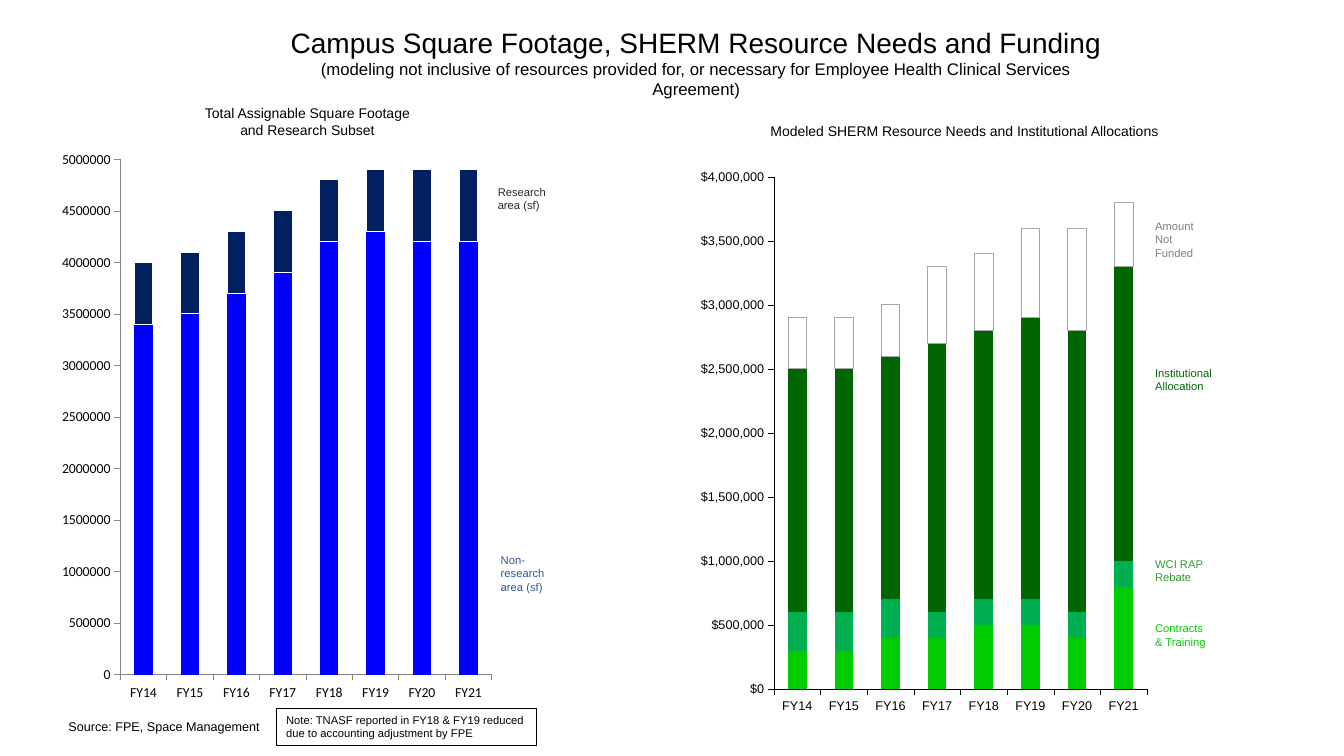
from lxml import etree
from pptx import Presentation
from pptx.chart.data import CategoryChartData
from pptx.dml.color import RGBColor
from pptx.enum.chart import XL_CHART_TYPE, XL_TICK_LABEL_POSITION, XL_TICK_MARK
from pptx.enum.shapes import MSO_SHAPE
from pptx.enum.text import MSO_ANCHOR, PP_ALIGN
from pptx.oxml.ns import qn
from pptx.util import Pt

BLACK = RGBColor(0x00, 0x00, 0x00)
WHITE = RGBColor(0xFF, 0xFF, 0xFF)
GRAY = RGBColor(0x80, 0x80, 0x80)
SILVER = RGBColor(0xA6, 0xA6, 0xA6)
AXIS = RGBColor(0x86, 0x86, 0x86)
INK = RGBColor(0x29, 0x29, 0x29)
BLUE = RGBColor(0x00, 0x00, 0xFF)
NAVY = RGBColor(0x00, 0x20, 0x60)
STEEL = RGBColor(0x2F, 0x55, 0x97)
LIME = RGBColor(0x00, 0xCC, 0x00)
MINT = RGBColor(0x00, 0xB0, 0x50)
PINE = RGBColor(0x00, 0x66, 0x00)
FERN = RGBColor(0x33, 0x99, 0x33)

LEFT, MID = PP_ALIGN.LEFT, PP_ALIGN.CENTER
YEARS = [f"FY{year}" for year in range(14, 22)]
UNIT = 100000  # series below are in hundreds of thousands

deck = Presentation()
deck.slide_width, deck.slide_height = Pt(960), Pt(540)
slide = deck.slides.add_slide(deck.slide_layouts[6])


def write(shape, lines, color, align):
    frame = shape.text_frame
    frame.word_wrap = True
    frame.vertical_anchor = MSO_ANCHOR.TOP
    for i, (text, size) in enumerate(lines):
        para = frame.add_paragraph() if i else frame.paragraphs[0]
        para.text = text
        para.alignment = align
        para.font.name = "Arial"
        para.font.size = Pt(size)
        para.font.color.rgb = color


def add_bars(box, plot, rows, top, form, font, size, axis, width):
    data = CategoryChartData(number_format=form)
    data.categories = YEARS
    for name, vals, *_ in rows:
        data.add_series(name, [val * UNIT for val in vals])
    chart = slide.shapes.add_chart(
        XL_CHART_TYPE.COLUMN_STACKED, *map(Pt, box), data).chart
    chart.has_legend = chart.has_title = False
    chart.font.name, chart.font.size = font, Pt(size)
    chart.font.color.rgb = BLACK
    bars = chart.plots[0]
    bars.gap_width, bars.overlap = 150, 100
    bars.vary_by_categories = False

    # Series colours
    for series, (_, _, fill, edge, thick) in zip(bars.series, rows):
        if fill is None:
            series.format.fill.background()
        else:
            series.format.fill.solid()
            series.format.fill.fore_color.rgb = fill
        if edge is None:
            series.format.line.fill.background()
        else:
            series.format.line.color.rgb = edge
            series.format.line.width = Pt(thick)

    # Axes
    for line in (chart.category_axis, chart.value_axis):
        line.has_major_gridlines = False
        line.major_tick_mark = XL_TICK_MARK.OUTSIDE
        line.minor_tick_mark = XL_TICK_MARK.NONE
        line.tick_label_position = XL_TICK_LABEL_POSITION.LOW
        line.format.line.color.rgb = axis
        line.format.line.width = Pt(width)
    scale = chart.value_axis
    scale.minimum_scale, scale.maximum_scale = 0, top
    scale.major_unit = 500000
    scale.tick_labels.number_format = form
    scale.tick_labels.number_format_is_linked = False

    # Inner plot area as shares of the chart
    area = chart.element.find(f".//{qn('c:plotArea')}")
    for old in area.findall(qn("c:layout")):
        area.remove(old)
    layout = etree.Element(qn("c:layout"))
    area.insert(0, layout)
    manual = etree.SubElement(layout, qn("c:manualLayout"))
    tags = ("layoutTarget", "xMode", "yMode", "x", "y", "w", "h")
    for tag, val in zip(tags, ("inner", "edge", "edge", *plot)):
        etree.SubElement(manual, qn(f"c:{tag}")).set("val", str(val))


# Funding chart
add_bars((480, 106.5, 347, 422), (0.21, 0.047, 0.768, 0.867), [
    ("Contracts & Training", (3, 3, 4, 4, 5, 5, 4, 8), LIME, None, 0),
    ("WCI RAP Rebate", (3, 3, 3, 2, 2, 2, 2, 2), MINT, None, 0),
    ("Institutional Allocation",
     (19, 19, 19, 21, 21, 22, 22, 23), PINE, None, 0),
    ("Amount Not Funded", (4, 4, 4, 6, 6, 7, 8, 5), None, SILVER, 0.54),
], 4000000, r"\$#,##0", "Arial", 9, BLACK, 0.13)

# Square footage chart
add_bars((37.4, 100, 319.6, 408), (0.152, 0.034, 0.83, 0.902), [
    ("Non-research area (sf)",
     (34, 35, 37, 39, 42, 43, 42, 42), BLUE, None, 0),
    ("Research area (sf)", (6, 6, 6, 6, 6, 6, 7, 7), NAVY, WHITE, 0.75),
], 5000000, "General", "Calibri", 9.8, AXIS, 0.5)

# Titles, series labels and source
EDGE = 818
for box, lines, color, align in [
    ((189.5, 14.5, 615.5, 45), [
        ("Campus Square Footage, SHERM Resource Needs and Funding", 20),
        ("(modeling not inclusive of resources provided for, or necessary "
         "for Employee Health Clinical Services Agreement)", 12),
    ], BLACK, MID),
    ((541.5, 84, 294.5, 32), [
        ("Modeled SHERM Resource Needs and Institutional Allocations", 10),
    ], BLACK, MID),
    ((95.5, 71, 248, 32), [("Total Assignable Square Footage", 10),
                           ("and Research Subset", 10)], BLACK, MID),
    ((EDGE, 153, 48, 37), [("Amount Not Funded", 8)], GRAY, LEFT),
    ((EDGE, 258, 60.5, 27), [("Institutional Allocation", 8)], PINE, LEFT),
    ((EDGE, 394.5, 60.5, 27), [("WCI RAP Rebate", 8)], FERN, LEFT),
    ((EDGE, 440.5, 52, 27), [("Contracts & Training", 8)], LIME, LEFT),
    ((348.5, 128.8, 52.5, 27), [("Research area (sf)", 8)], INK, LEFT),
    ((350.6, 391.5, 48, 37), [("Non-research area (sf)", 8)], STEEL, LEFT),
    ((41.8, 510.2, 153, 18), [("Source: FPE, Space Management", 9)],
     BLACK, LEFT),
]:
    write(slide.shapes.add_textbox(*map(Pt, box)), lines, color, align)

# Boxed note
note = slide.shapes.add_shape(
    MSO_SHAPE.RECTANGLE, Pt(197.3), Pt(506), Pt(185.8), Pt(26.5))
note.shadow.inherit = False
note.fill.background()
note.line.color.rgb = BLACK
note.line.width = Pt(0.25)
write(note, [("Note: TNASF reported in FY18 & FY19 reduced due to accounting "
              "adjustment by FPE", 8)], BLACK, LEFT)

deck.save("out.pptx")
